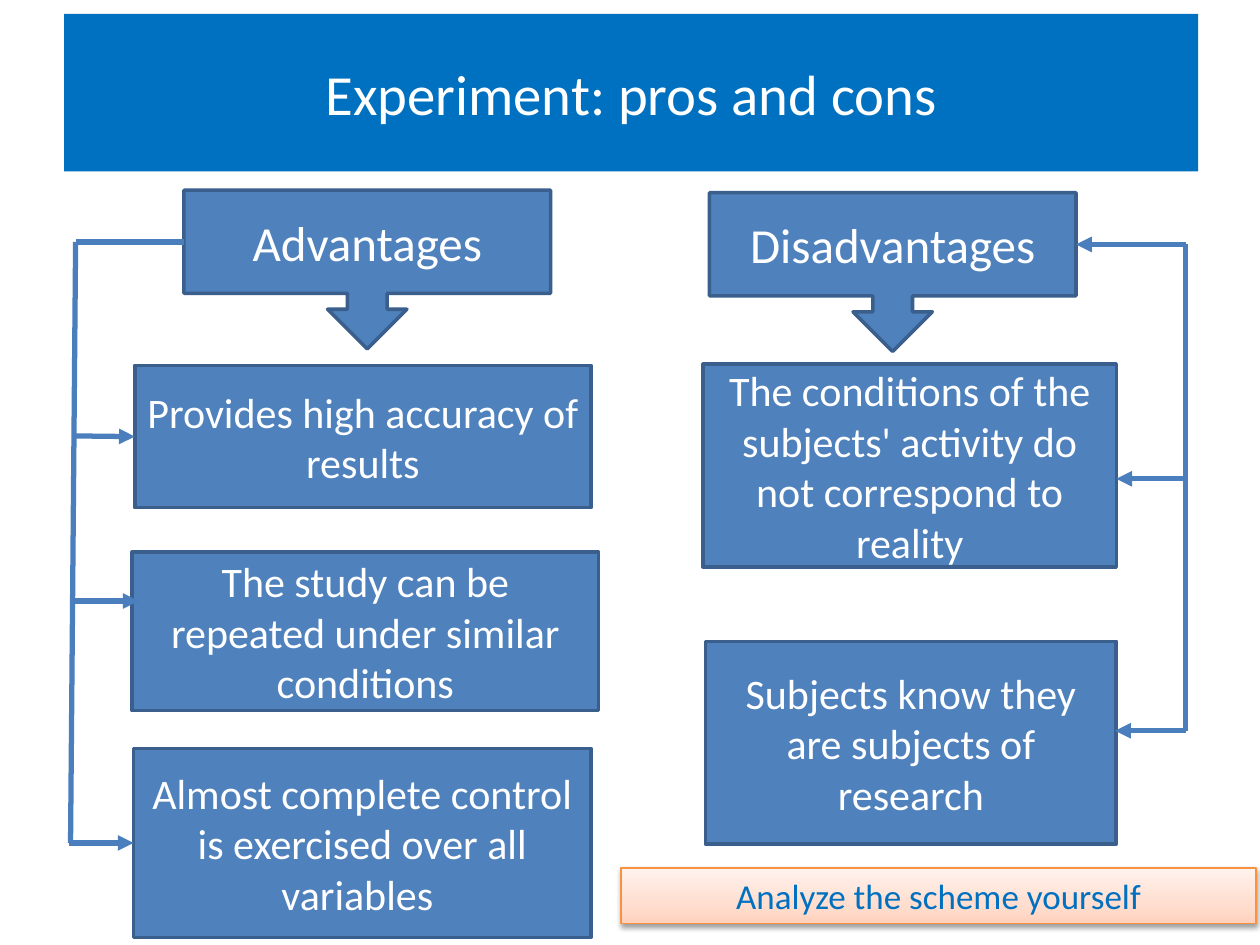
from pptx import Presentation
from pptx.dml.color import RGBColor
from pptx.enum.shapes import MSO_CONNECTOR, MSO_SHAPE
from pptx.enum.text import MSO_ANCHOR, MSO_AUTO_SIZE, PP_ALIGN
from pptx.oxml import parse_xml
from pptx.oxml.ns import nsdecls
from pptx.util import Inches, Pt

RECTANGLE, CALLOUT = MSO_SHAPE.RECTANGLE, MSO_SHAPE.DOWN_ARROW_CALLOUT
STRAIGHT = MSO_CONNECTOR.STRAIGHT
MIDDLE, TOP = MSO_ANCHOR.MIDDLE, MSO_ANCHOR.TOP
CENTER = PP_ALIGN.CENTER
FIXED, GROW = MSO_AUTO_SIZE.NONE, MSO_AUTO_SIZE.SHAPE_TO_FIT_TEXT
LEFT_SIDE = 1

BLUE, WHITE = "0070C0", "FFFFFF"
BOX_FILL, BOX_EDGE, LINK = "4F81BD", "3A5F8C", "4B7EBC"


def paint(fill, color):
    fill.solid()
    fill.fore_color.rgb = RGBColor.from_string(color)


def write(shape, text, size, color, anchor=MIDDLE, auto_size=FIXED):
    frame = shape.text_frame
    frame.text = text
    frame_format = {"word_wrap": True, "auto_size": auto_size, "vertical_anchor": anchor}
    for key, value in frame_format.items():
        setattr(frame, key, value)
    paragraph = frame.paragraphs[0]
    paragraph.alignment = CENTER
    font = paragraph.runs[0].font
    for key, value in {"name": "Calibri", "size": Pt(size)}.items():
        setattr(font, key, value)
    paint(font.fill, color)


deck = Presentation()
deck.slide_width, deck.slide_height = Inches(10), Inches(7.5)
COL, ROW = deck.slide_width / 100, deck.slide_height / 75
slide = deck.slides.add_slide(deck.slide_layouts[5])
shapes = slide.shapes

title = shapes.title
title_place = {"left": 5.1 * COL, "top": 1.1 * ROW, "width": 90 * COL, "height": 12.5 * ROW}
for key, value in title_place.items():
    setattr(title, key, int(value))
paint(title.fill, BLUE)
write(title, "Experiment: pros and cons", 32.4, WHITE)

statements = [
    (CALLOUT, 14.6, 15.1, 29.1, 12.6, 28, "Advantages"),
    (CALLOUT, 56.3, 15.3, 29.1, 12.6, 28, "Disadvantages"),
    (RECTANGLE, 10.7, 29, 36.2, 11.3, 24, "Provides high accuracy of results"),
    (RECTANGLE, 55.8, 28.9, 32.8, 16.1, 24,
     "The conditions of the subjects' activity do not correspond to reality"),
    (RECTANGLE, 10.5, 43.8, 37, 12.6, 24,
     "The study can be repeated under similar conditions"),
    (RECTANGLE, 56, 50.9, 32.6, 16.1, 24, "Subjects know they are subjects of research"),
    (RECTANGLE, 10.6, 59.4, 36.3, 15, 24,
     "Almost complete control is exercised over all variables "),
]
boxes = {}
for kind, x, y, width, height, size, text in statements:
    box = shapes.add_shape(kind, int(x * COL), int(y * ROW), int(width * COL), int(height * ROW))
    box.shadow.inherit = False
    paint(box.fill, BOX_FILL)
    paint(box.line.fill, BOX_EDGE)
    box.line.width = Pt(2)
    write(box, text, size, WHITE)
    boxes[text.split()[0]] = box

links = [
    (6, 34.6, 10.7, 34.6, True, "Provides"),
    (5.9, 47.7, 11, 47.7, True, None),
    (94.1, 19.4, 94.1, 58, False, None),
    (94.1, 19.4, 85.4, 19.4, True, None),
    (94.1, 38, 88.6, 38, True, None),
    (94.1, 58, 88.5, 58, True, None),
    (6, 19.2, 5.6, 66.9, False, None),
    (5.5, 66.9, 10.6, 66.9, True, "Almost"),
    (6, 19.2, 14.6, 19.2, False, None),
]
for x1, y1, x2, y2, arrow, target in links:
    link = shapes.add_connector(STRAIGHT, int(x1 * COL), int(y1 * ROW), int(x2 * COL), int(y2 * ROW))
    if target:
        link.end_connect(boxes[target], LEFT_SIDE)
    paint(link.line.fill, LINK)
    link.line.width = Pt(3)
    if arrow:
        link.line._get_or_add_ln().append(
            parse_xml(f'<a:tailEnd {nsdecls("a")} type="triangle"/>'))
    link._element.spPr.append(parse_xml(f'<a:effectLst {nsdecls("a")}/>'))

task = shapes.add_shape(RECTANGLE, int(49.3 * COL), int(68.9 * ROW), int(50.4 * COL), int(4.4 * ROW))
paint(task.line.fill, "F69240")
task.line.width = Pt(0.75)
write(task, "Analyze the scheme yourself", 20, BLUE, TOP, GROW)
stops = "".join(
    f'<a:gs pos="{share * 1000}"><a:srgbClr val="{color}"/></a:gs>'
    for share, color in [(0, "FFD2BD"), (35, "FFDED0"), (100, "FFF2ED")])
task_properties = task._element.spPr
task_properties.find("{*}prstGeom").addnext(parse_xml(
    f'<a:gradFill {nsdecls("a")} rotWithShape="1"><a:gsLst>{stops}</a:gsLst>'
    '<a:lin ang="16200000" scaled="1"/></a:gradFill>'))
task_properties.append(parse_xml(
    f'<a:effectLst {nsdecls("a")}><a:outerShdw blurRad="{Pt(3.1)}" dist="{Pt(1.6)}" '
    'dir="5400000" rotWithShape="0"><a:srgbClr val="000000"><a:alpha val="38000"/>'
    '</a:srgbClr></a:outerShdw></a:effectLst>'))

deck.save("out.pptx")
